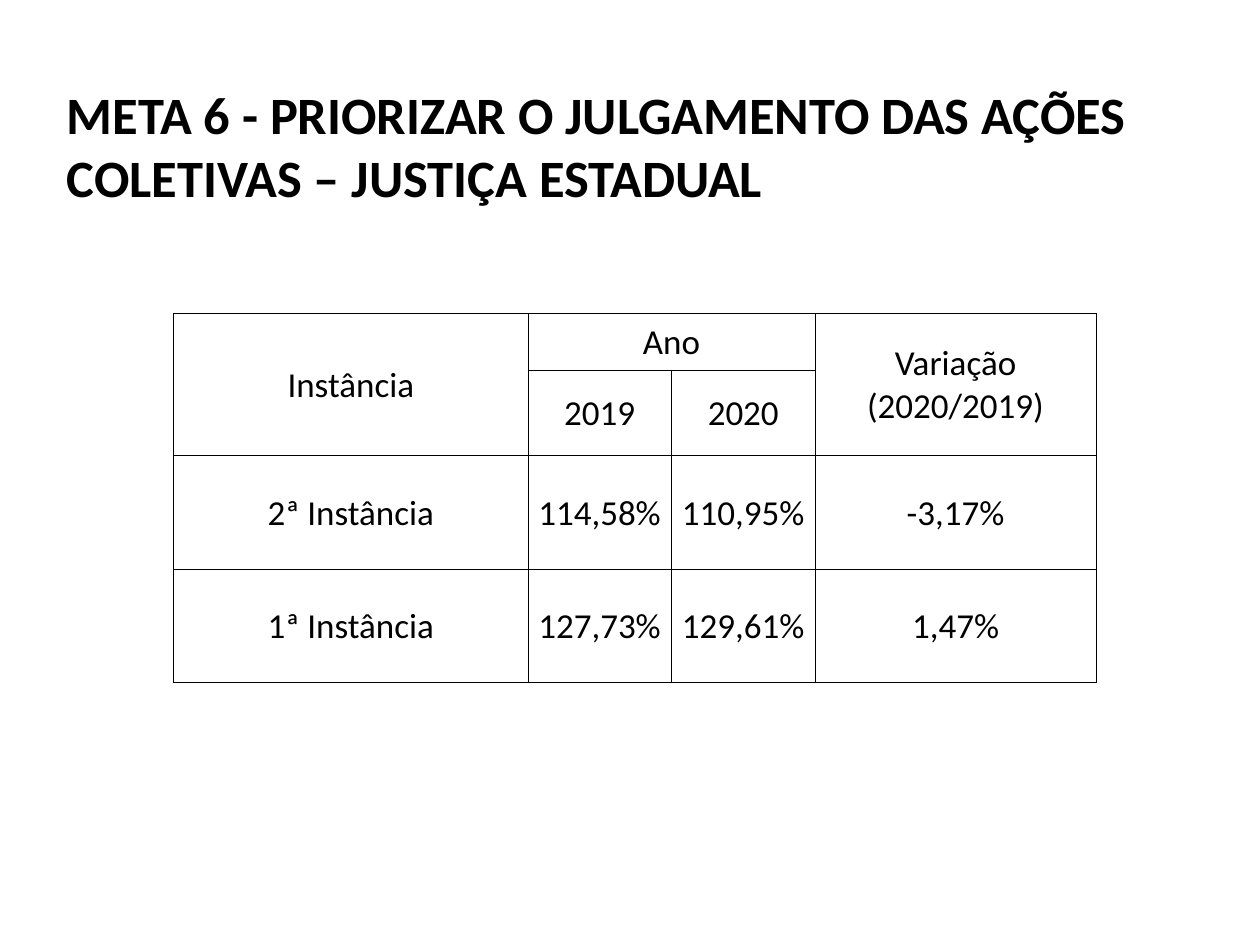
from lxml.etree import SubElement
from pptx import Presentation
from pptx.dml.color import RGBColor
from pptx.enum.text import MSO_ANCHOR, MSO_AUTO_SIZE, PP_ALIGN
from pptx.oxml.ns import qn
from pptx.util import Inches, Pt

BLACK = RGBColor(0x00, 0x00, 0x00)
WHITE = RGBColor(0xFF, 0xFF, 0xFF)

TITLE = "META 6 - PRIORIZAR O JULGAMENTO DAS AÇÕES COLETIVAS – JUSTIÇA ESTADUAL"
RESULTS = [
    ["Instância", "Ano", "", "Variação (2020/2019)"],
    ["", "2019", "2020", ""],
    ["2ª Instância", "114,58%", "110,95%", "-3,17%"],
    ["1ª Instância", "127,73%", "129,61%", "1,47%"],
]
# First and last cell of each merged heading, as (row, column)
MERGED_HEADINGS = [((0, 0), (1, 0)), ((0, 1), (0, 2)), ((0, 3), (1, 3))]


class SlideBuilder:
    """Holds the style and the current slide; boxes are shares of its size."""

    font_name = "Calibri"
    title_size = Pt(30)
    table_size = Pt(20)
    border_width = Pt(0.5)
    cell_margin = Inches(0.01)

    def __init__(self, deck):
        self.width, self.height = deck.slide_width, deck.slide_height
        self.slide = deck.slides.add_slide(deck.slide_layouts[5])
        background = self.slide.background.fill
        background.solid()
        background.fore_color.rgb = WHITE

    def box(self, left, top, width, height):
        return (int(left * self.width), int(top * self.height),
                int(width * self.width), int(height * self.height))

    def format_text(self, paragraph, size, alignment, bold=False):
        paragraph.alignment = alignment
        font = paragraph.font
        font.name, font.size, font.bold = self.font_name, size, bold
        font.color.rgb = BLACK

    def title(self, text, *shares):
        heading = self.slide.shapes.title
        heading.left, heading.top, heading.width, heading.height = self.box(*shares)
        frame = heading.text_frame
        frame.text = text
        frame.word_wrap = True
        frame.auto_size = MSO_AUTO_SIZE.SHAPE_TO_FIT_TEXT
        frame.vertical_anchor = MSO_ANCHOR.TOP
        self.format_text(frame.paragraphs[0], self.title_size, PP_ALIGN.LEFT, bold=True)

    def table(self, texts, column_shares, row_shares, left, top, merges):
        frame = self.slide.shapes.add_table(
            len(texts), len(texts[0]),
            *self.box(left, top, sum(column_shares), sum(row_shares)))
        grid = frame.table
        grid.first_row = grid.horz_banding = False
        for column, share in zip(grid.columns, column_shares):
            column.width = int(share * self.width)
        for row, share in zip(grid.rows, row_shares):
            row.height = int(share * self.height)
        for row, row_texts in enumerate(texts):
            for column, text in enumerate(row_texts):
                self.cell(grid.cell(row, column), text)
        for first, last in merges:
            grid.cell(*first).merge(grid.cell(*last))

    def cell(self, cell, text):
        cell.text = text
        cell.vertical_anchor = MSO_ANCHOR.MIDDLE
        cell.margin_left = cell.margin_right = cell.margin_top = self.cell_margin
        cell.margin_bottom = 0
        self.format_text(cell.text_frame.paragraphs[0], self.table_size, PP_ALIGN.CENTER)
        # Borders come before the fill in the cell properties
        properties = cell._tc.get_or_add_tcPr()
        for side in ("a:lnL", "a:lnR", "a:lnT", "a:lnB"):
            line = SubElement(properties, qn(side), w=str(self.border_width))
            line_fill = SubElement(line, qn("a:solidFill"))
            SubElement(line_fill, qn("a:srgbClr"), val=str(BLACK))
        cell.fill.background()


def main():
    deck = Presentation()
    deck.slide_width, deck.slide_height = Inches(10), Inches(7.5)
    builder = SlideBuilder(deck)

    # Heading
    builder.title(TITLE, 0.043, 0.08, 0.866, 0.148)

    # Results by court level: each result row is twice a heading row
    heading_row = 0.06
    builder.table(
        RESULTS,
        column_shares=[0.281, 0.114, 0.114, 0.223],
        row_shares=[heading_row] * 2 + [2 * heading_row] * 2,
        left=0.138, top=0.332, merges=MERGED_HEADINGS)

    deck.save("out.pptx")


if __name__ == "__main__":
    main()
